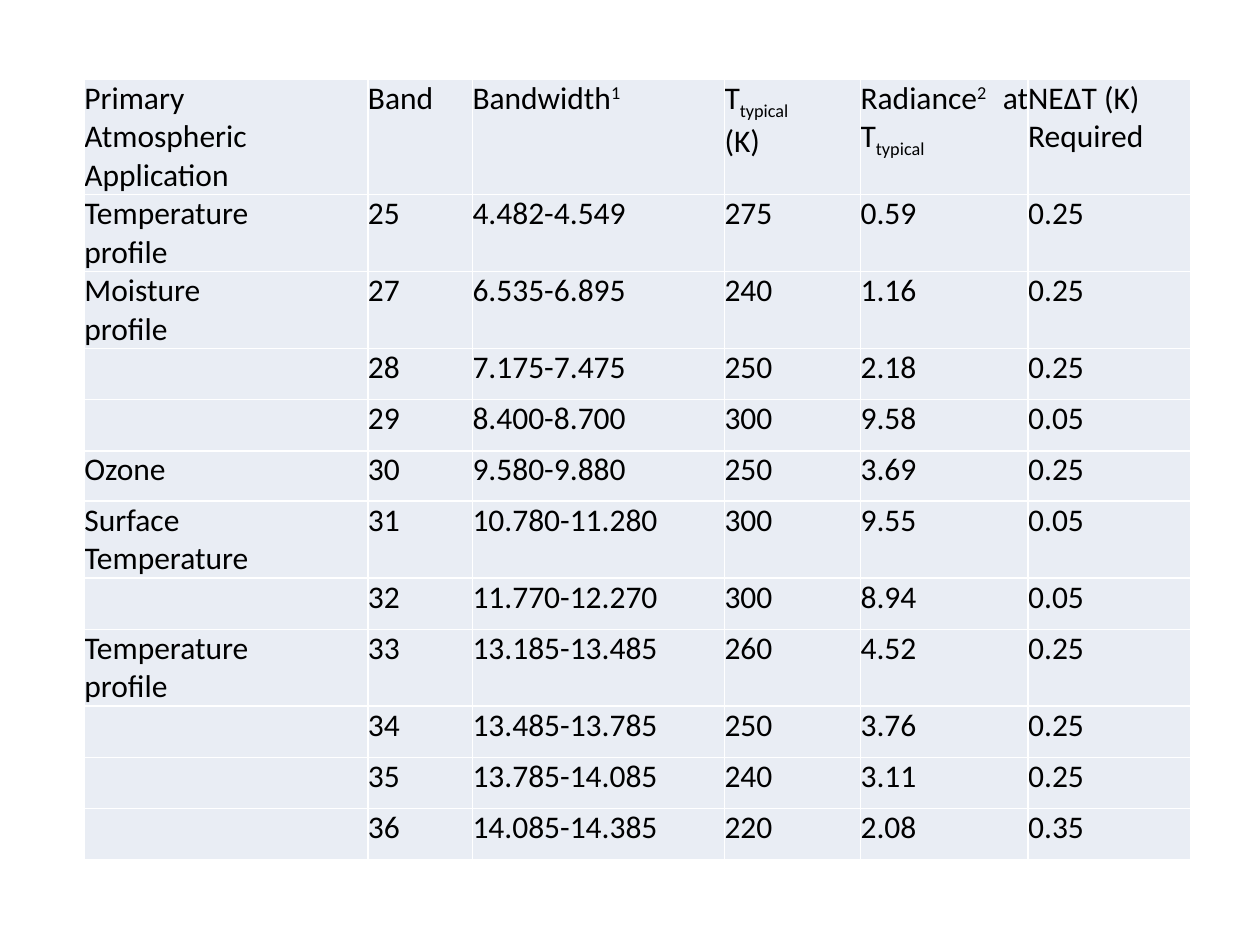
from typing import NamedTuple

from pptx import Presentation
from pptx.dml.color import RGBColor
from pptx.enum.text import PP_ALIGN as Align
from pptx.table import _Cell as Cell
from pptx.util import Inches, Pt

CELL_FILL = RGBColor(0xE9, 0xED, 0xF4)
INK = RGBColor(0x00, 0x00, 0x00)
SUPERSCRIPT, SUBSCRIPT = 30000, -25000


class Piece(NamedTuple):
    text: str
    baseline: int = 0


class Band(NamedTuple):
    application: str
    number: str
    bandwidth: str
    typical_temperature: str
    radiance: str
    required: str


TYPICAL = Piece("typical", SUBSCRIPT)
HEADINGS = [
    [[Piece("Primary")], [Piece("Atmospheric Application")]],
    [[Piece("Band")]],
    [[Piece("Bandwidth"), Piece("1", SUPERSCRIPT)]],
    [[Piece("T"), TYPICAL], [Piece("(K)")]],
    [[Piece("Radiance"), Piece("2", SUPERSCRIPT), Piece(" at T"), TYPICAL]],
    [[Piece("NEΔT (K)")], [Piece("Required")]],
]
BANDS = [
    Band("Temperature\nprofile", "25", "4.482-4.549", "275", "0.59", "0.25"),
    Band("Moisture\nprofile", "27", "6.535-6.895", "240", "1.16", "0.25"),
    Band("", "28", "7.175-7.475", "250", "2.18", "0.25"),
    Band("", "29", "8.400-8.700", "300", "9.58", "0.05"),
    Band("Ozone", "30", "9.580-9.880", "250", "3.69", "0.25"),
    Band("Surface\nTemperature", "31", "10.780-11.280", "300", "9.55", "0.05"),
    Band("", "32", "11.770-12.270", "300", "8.94", "0.05"),
    Band("Temperature\nprofile", "33", "13.185-13.485", "260", "4.52", "0.25"),
    Band("", "34", "13.485-13.785", "250", "3.76", "0.25"),
    Band("", "35", "13.785-14.085", "240", "3.11", "0.25"),
    Band("", "36", "14.085-14.385", "220", "2.08", "0.35"),
]
COLUMN_WIDTHS = [2.25, 0.83, 2, 1.08, 1.33, 1.29]
ROW_HEIGHTS = [0.81] + [0.4] * len(BANDS)


def plain(text: str) -> list[list[Piece]]:
    return [[Piece(line)] for line in text.split("\n")] if text else []


def fill_cell(cell: Cell, lines: list[list[Piece]]) -> None:
    cell.fill.solid()
    cell.fill.fore_color.rgb = CELL_FILL
    if lines:
        cell.margin_left = cell.margin_right = Inches(0)
        cell.margin_top = cell.margin_bottom = Inches(0)
    for index, pieces in enumerate(lines):
        frame = cell.text_frame
        line = frame.add_paragraph() if index else frame.paragraphs[0]
        line.alignment = Align.JUSTIFY
        line.font.name = "Calibri"
        line.font.size = Pt(18)
        line.font.color.rgb = INK
        for piece in pieces:
            run = line.add_run()
            run.text = piece.text
            if piece.baseline:
                run._r.get_or_add_rPr().set("baseline", str(piece.baseline))


def main() -> None:
    deck = Presentation()
    deck.slide_width, deck.slide_height = Inches(10), Inches(7.5)
    slide = deck.slides.add_slide(deck.slide_layouts[6])
    bands = slide.shapes.add_table(
        len(ROW_HEIGHTS), len(COLUMN_WIDTHS), Inches(0.67), Inches(0.63),
        Inches(sum(COLUMN_WIDTHS)), Inches(sum(ROW_HEIGHTS)),
    ).table
    bands.first_row = bands.horz_banding = False
    for column, width in zip(bands.columns, COLUMN_WIDTHS):
        column.width = Inches(width)
    contents = [HEADINGS] + [[plain(value) for value in band] for band in BANDS]
    for row, height, row_contents in zip(bands.rows, ROW_HEIGHTS, contents):
        row.height = Inches(height)
        for cell, lines in zip(row.cells, row_contents):
            fill_cell(cell, lines)
    deck.save("out.pptx")


if __name__ == "__main__":
    main()
